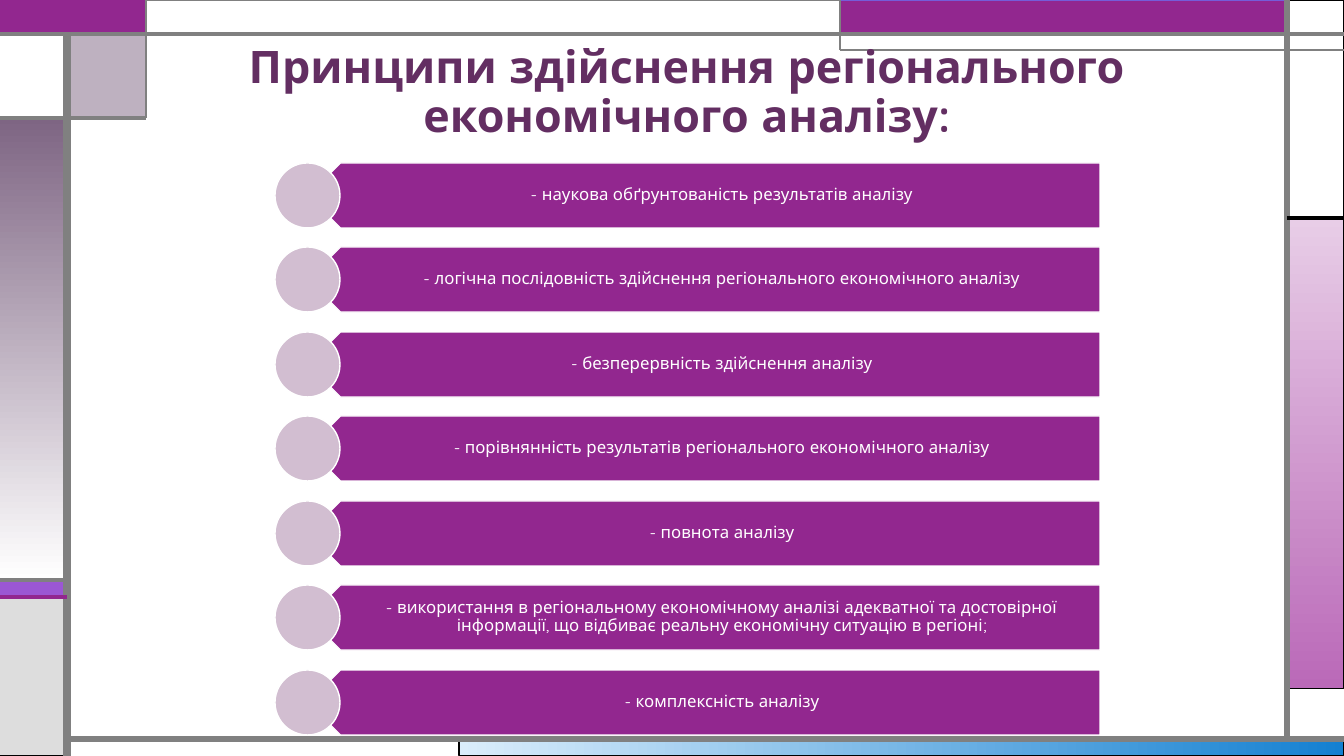
from lxml import etree
from pptx import Presentation, util as u
from pptx.dml.color import RGBColor
from pptx.enum import shapes, text
from pptx.oxml.ns import qn

PRINCIPLES = [
    "- наукова обґрунтованість результатів аналізу",
    "- логічна послідовність здійснення регіонального економічного аналізу",
    "- безперервність здійснення аналізу",
    "- порівнянність результатів регіонального економічного аналізу",
    "- повнота аналізу",
    "- використання в регіональному економічному аналізі адекватної та достовірної "
    "інформації, що відбиває реальну економічну ситуацію в регіоні;",
    "- комплексність аналізу",
]
PURPLE, GREY, WHITE, BLACK = "92278F", "808080", "FFFFFF", "000000"
PANELS = [
    (459, 739, 885, 17, ("DAEDFB", "1480D1", 0), BLACK, 0.75),
    (1287, 218, 57, 471, ("E8CDE7", "BA69B8", 270), BLACK, 0.75),
    (0, 580, 67, 17, "9B57D3", BLACK, 0.75),
    (0, 597, 67, 159, "DDDDDD", BLACK, 0.75),
    (1287, 0, 57, 218, WHITE, BLACK, 0.75),
    (840, 0, 447, 34, PURPLE, "755DD9", 0.75),
    (67, 34, 79, 84, "7E6583", BLACK, 0.75, 50),
    (0, 118, 67, 462, ("7E6583", WHITE, 270), BLACK, 0.75),
    (0, 34, 67, 84, WHITE, BLACK, 0.75),
    (0, 0, 146, 34, PURPLE, PURPLE, 1.5),
    (146, 0, 694, 34, WHITE, GREY, 0.75),
]
RULES = [
    (67, 756, 67, 34, GREY, 6),
    (67, 739, 1344, 739, GREY, 4.5),
    (1287, 739, 1287, 0, GREY, 4.5),
    (0, 34, 1344, 34, GREY, 3),
    (1344, 50, 840, 50, GREY, 1.5),
    (840, 50, 840, 0, GREY, 1.5),
    (1287, 218, 1344, 218, BLACK, 2.25),
    (146, 0, 146, 118, GREY, 1.5),
    (146, 118, 0, 118, GREY, 2.25),
    (67, 580, 0, 580, GREY, 2.25),
    (67, 597, 0, 597, PURPLE, 2.25),
]


def px(n):
    return u.Emu(round(n * 12192000 / 1344))


def rgb(value):
    return RGBColor.from_string(value)


class Deck:
    """Draws styled elements on the current slide, measured in px."""

    font = "Quicksand"

    def __init__(self):
        self.prs = Presentation()
        self.prs.slide_width, self.prs.slide_height = px(1344), px(756)
        self.s = self.prs.slides.add_slide(self.prs.slide_layouts[6])

    def shape(self, kind, x, y, w, h, fill, line, width, alpha=100):
        sp = self.s.shapes.add_shape(kind, px(x), px(y), px(w), px(h))
        sp.shadow.inherit = False
        sp.line.color.rgb = rgb(line)
        sp.line.width = u.Pt(width)
        if isinstance(fill, tuple):
            *colors, angle = fill
            sp.fill.gradient()
            sp.fill.gradient_angle = angle
            for stop, color, position in zip(sp.fill.gradient_stops, colors, (0, 1)):
                stop.color.rgb = rgb(color)
                stop.position = position
        else:
            sp.fill.solid()
            sp.fill.fore_color.rgb = rgb(fill)
        if alpha < 100:
            color = sp.fill._xPr.find(qn("a:solidFill"))[0]
            etree.SubElement(color, qn("a:alpha"), val=str(alpha * 1000))
        return sp

    def rule(self, x1, y1, x2, y2, color, width):
        c = self.s.shapes.add_connector(
            shapes.MSO_CONNECTOR.STRAIGHT, px(x1), px(y1), px(x2), px(y2))
        c.line.color.rgb = rgb(color)
        c.line.width = u.Pt(width)
        etree.SubElement(c._element.spPr, qn("a:effectLst"))

    def text(self, x, y, w, h, words, size, color, anchor, left=10, right=10,
             after=0, bold=False):
        tf = self.s.shapes.add_textbox(px(x), px(y), px(w), px(h)).text_frame
        tf.word_wrap = True
        tf.vertical_anchor = anchor
        tf.margin_left, tf.margin_right = px(left), px(right)
        tf.margin_top = tf.margin_bottom = px(5)
        tf.text = words
        p = tf.paragraphs[0]
        p.alignment = text.PP_ALIGN.CENTER
        p.line_spacing = 0.9
        p.space_after = u.Pt(after)
        r = p.runs[0]
        r.font.name, r.font.size, r.font.bold = self.font, u.Pt(size), bold
        r.font.color.rgb = rgb(color)

    def principle(self, y, words):
        plate = self.shape(shapes.MSO_SHAPE.PENTAGON, 308, y, 792, 65, PURPLE, WHITE, 1)
        plate.rotation = 180
        self.text(325, y, 775, 65, words, 12, WHITE, text.MSO_ANCHOR.MIDDLE,
                  left=28, right=9, after=4)
        self.shape(shapes.MSO_SHAPE.OVAL, 275, y, 65, 65, "D2BED1", WHITE, 1)


def main():
    deck = Deck()
    for panel in PANELS:
        deck.shape(shapes.MSO_SHAPE.RECTANGLE, *panel)
    for rule in RULES:
        deck.rule(*rule)
    deck.text(158, 21, 1058, 126, "Принципи здійснення регіонального економічного аналізу:",
              32, "632E62", text.MSO_ANCHOR.BOTTOM, bold=True)
    for i, words in enumerate(PRINCIPLES):
        deck.principle(163 + i * 169 // 2, words)
    deck.prs.save("out.pptx")


if __name__ == "__main__":
    main()
